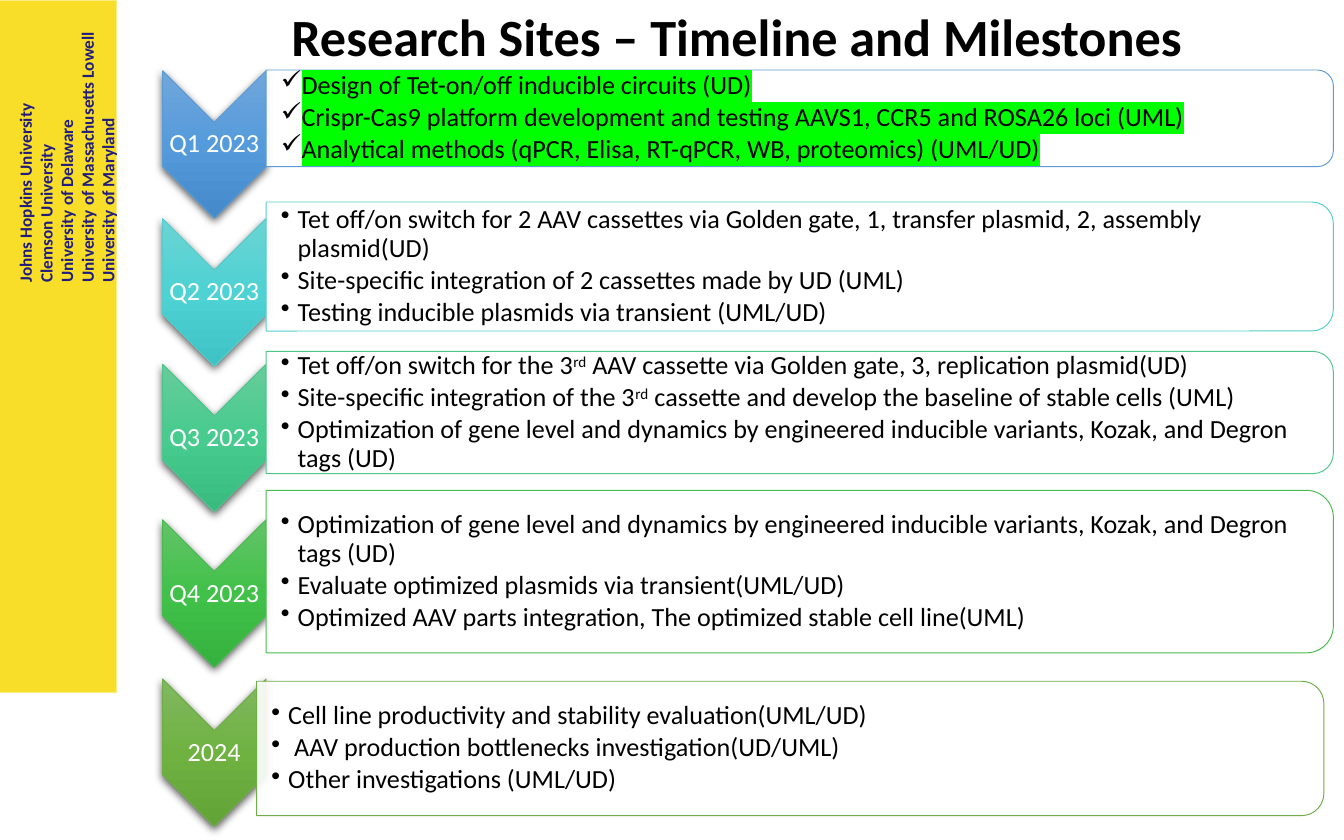
from pptx import Presentation
from pptx.dml.color import RGBColor
from pptx.enum.shapes import MSO_SHAPE
from pptx.enum.text import MSO_ANCHOR, MSO_AUTO_SIZE, PP_ALIGN
from pptx.oxml import parse_xml
from pptx.oxml.ns import nsdecls, qn
from pptx.util import Pt

RECT, CHEVRON, TAB = (MSO_SHAPE.RECTANGLE, MSO_SHAPE.CHEVRON,
                      MSO_SHAPE.ROUND_2_SAME_RECTANGLE)
TOP, MIDDLE = MSO_ANCHOR.TOP, MSO_ANCHOR.MIDDLE
LEFT, CENTER = PP_ALIGN.LEFT, PP_ALIGN.CENTER
NO_FIT = MSO_AUTO_SIZE.NONE

FONT = "Calibri"
YELLOW, NAVY, GREEN = "F8DE28", "211D7D", "00FF00"
ARROW_X, ARROW_W, ARROW_H = 114.8, 55.4, 79
PANEL_W = 571.7

SITES = ["Johns Hopkins University", "Clemson University",
         "University of Delaware", "University of Massachusetts Lowell",
         "University of Maryland"]

# Label, arrow middle, panel left, panel middle, panel height,
# line colour, gradient colours, milestones (^ marks superscript)
STAGES = [
    ("Q1 2023", 77.4, 142.6, 63.4, 51.8,
     "5B9BD5", ("71A6DB", "559BDB", "448ACA"),
     ["Design of Tet-on/off inducible circuits (UD)",
      "Crispr-Cas9 platform development and testing AAVS1, CCR5 and ROSA26 loci (UML)",
      "Analytical methods (qPCR, Elisa, RT-qPCR, WB, proteomics) (UML/UD)"]),
    ("Q2 2023", 156.6, 142.6, 142.8, 69.1,
     "54CCCD", ("6CD3D3", "4ED2D3", "3EC2C3"),
     ["Tet off/on switch for 2 AAV cassettes via Golden gate, 1, transfer plasmid, 2, assembly plasmid(UD)",
      "Site-specific integration of 2 cassettes made by UD (UML)",
      "Testing inducible plasmids via transient (UML/UD)"]),
    ("Q3 2023", 234.6, 142.6, 221, 65.5,
     "4DC58D", ("67CC9A", "47CB8E", "39BB7F"),
     ["Tet off/on switch for the 3^rd^ AAV cassette via Golden gate, 3, replication plasmid(UD)",
      "Site-specific integration of the 3^rd^ cassette and develop the baseline of stable cells (UML)",
      "Optimization of gene level and dynamics by engineered inducible variants, Kozak, and Degron tags (UD)"]),
    ("Q4 2023", 318, 142.6, 306.2, 87.1,
     "48BB4F", ("63C368", "42C14A", "34B23D"),
     ["Optimization of gene level and dynamics by engineered inducible variants, Kozak, and Degron tags (UD)",
      "Evaluate optimized plasmids via transient(UML/UD)",
      "Optimized AAV parts integration, The optimized stable cell line(UML)"]),
    ("2024", 403.2, 137.5, 401, 72,
     "70AD47", ("81B861", "6FB242", "62A336"),
     ["Cell line productivity and stability evaluation(UML/UD)",
      " AAV production bottlenecks investigation(UD/UML)",
      "Other investigations (UML/UD)"]),
]


def rgb(code):
    return RGBColor.from_string(code)


def write(frame, lines, size=14, color="000000", bold=False, align=LEFT,
          anchor=MIDDLE, wrap=True, inset=None, spacing=None, after=0,
          bullet=None, mark=None):
    """Fill a text frame with one paragraph per line."""
    frame.word_wrap, frame.auto_size = wrap, NO_FIT
    frame.vertical_anchor = anchor
    if inset:
        (frame.margin_left, frame.margin_top,
         frame.margin_right, frame.margin_bottom) = map(Pt, inset)
    for i, line in enumerate(lines):
        para = frame.paragraphs[0] if i == 0 else frame.add_paragraph()
        para.alignment, para.line_spacing = align, spacing
        para.space_before, para.space_after = Pt(0), Pt(after)
        if bullet:
            props = para._p.get_or_add_pPr()
            props.set("marL", str(Pt(9)))
            props.set("indent", str(-Pt(9)))
            props.append(parse_xml(
                f'<a:buChar {nsdecls("a")} char="{bullet}"/>'))
        for j, part in enumerate(line.split("^")):
            run = para.add_run()
            run.text = part
            font = run.font
            font.size, font.bold, font.name = Pt(size), bold, FONT
            font.color.rgb = rgb(color)
            props = run._r.get_or_add_rPr()
            if j % 2:
                props.set("baseline", "30000")
            if mark:
                props.find(qn("a:latin")).addprevious(parse_xml(
                    f'<a:highlight {nsdecls("a")}>'
                    f'<a:srgbClr val="{mark}"/></a:highlight>'))


def add_shape(slide, kind, mid_x, mid_y, wide, high, turn=0, fill=None,
              line=None):
    """Add a shape centred on a point; the size is that before turning."""
    shape = slide.shapes.add_shape(kind, Pt(mid_x - wide / 2),
                                   Pt(mid_y - high / 2), Pt(wide), Pt(high))
    shape.rotation = turn
    shape.shadow.inherit = False
    if fill:
        shape.fill.solid()
        shape.fill.fore_color.rgb = rgb(fill)
    if line:
        shape.line.color.rgb = rgb(line)
        shape.line.width = Pt(0.5)
    else:
        shape.line.fill.background()
    return shape


def add_text(slide, left, mid_y, wide, high, lines, **style):
    box = slide.shapes.add_textbox(Pt(left), Pt(mid_y - high / 2),
                                   Pt(wide), Pt(high))
    write(box.text_frame, lines, **style)


def add_arrow(slide, mid_y, line, shades):
    """Add a downward chevron with a vertical gradient and a soft shadow."""
    arrow = add_shape(slide, CHEVRON, ARROW_X, mid_y, ARROW_H, ARROW_W,
                      turn=90, line=line)
    stops = "".join(f'<a:gs pos="{i * 50000}"><a:srgbClr val="{shade}"/></a:gs>'
                    for i, shade in enumerate(shades))
    props = arrow._element.spPr
    props.find(qn("a:prstGeom")).addnext(parse_xml(
        f'<a:gradFill {nsdecls("a")} rotWithShape="0"><a:gsLst>{stops}</a:gsLst>'
        '<a:lin ang="5400000" scaled="0"/></a:gradFill>'))
    props.find(qn("a:effectLst")).append(parse_xml(
        f'<a:outerShdw {nsdecls("a")} blurRad="{Pt(4.5)}" dist="{Pt(1.5)}" '
        'dir="5400000" algn="ctr" rotWithShape="0"><a:srgbClr val="000000">'
        '<a:alpha val="63000"/></a:srgbClr></a:outerShdw>'))


def add_panel(slide, left, mid_y, high, line):
    """Add a nearly opaque white panel with rounded right corners."""
    panel = add_shape(slide, TAB, left + PANEL_W / 2, mid_y, high, PANEL_W,
                      turn=90, fill="FFFFFF", line=line)
    tint = panel._element.spPr.find(qn("a:solidFill"))[0]
    tint.append(parse_xml(f'<a:alpha {nsdecls("a")} val="90000"/>'))


def add_sidebar(slide):
    add_shape(slide, RECT, 31.3, 185.4, 62.6, 370.8, fill=YELLOW, line="FBEC85")
    names = add_shape(slide, RECT, 31.7, 83.5, 149.8, 54.7, turn=270,
                      fill=YELLOW)
    write(names.text_frame, SITES, size=9.2, color=NAVY, bold=True,
          anchor=TOP, wrap=False)


def add_stage(slide, label, arrow_y, left, mid_y, high, line, shades, goals):
    add_arrow(slide, arrow_y, line, shades)
    add_text(slide, ARROW_X - ARROW_W / 2, arrow_y, ARROW_W, 23, [label],
             color="FFFFFF", align=CENTER, spacing=0.9,
             inset=(0.7, 0.7, 0.7, 0.7))
    add_panel(slide, left, mid_y, high, line)
    done = label == "Q1 2023"
    add_text(slide, left, mid_y, 568, high - 6, goals, spacing=0.9, after=2,
             inset=(7.9, 0.7, 0.7, 0.7), bullet="✓" if done else "•",
             mark=GREEN if done else None)


def main():
    deck = Presentation()
    deck.slide_width, deck.slide_height = Pt(720), Pt(450)
    slide = deck.slides.add_slide(deck.slide_layouts[5])

    # Title
    title = slide.shapes.title
    title.left, title.top, title.width, title.height = map(
        Pt, (111, -1.5, 567, 41))
    write(title.text_frame, ["Research Sites – Timeline and Milestones"],
          size=28, bold=True, align=CENTER, anchor=TOP)

    # Partner sites and timeline
    add_sidebar(slide)
    for stage in STAGES:
        add_stage(slide, *stage)
    deck.save("out.pptx")


if __name__ == "__main__":
    main()
